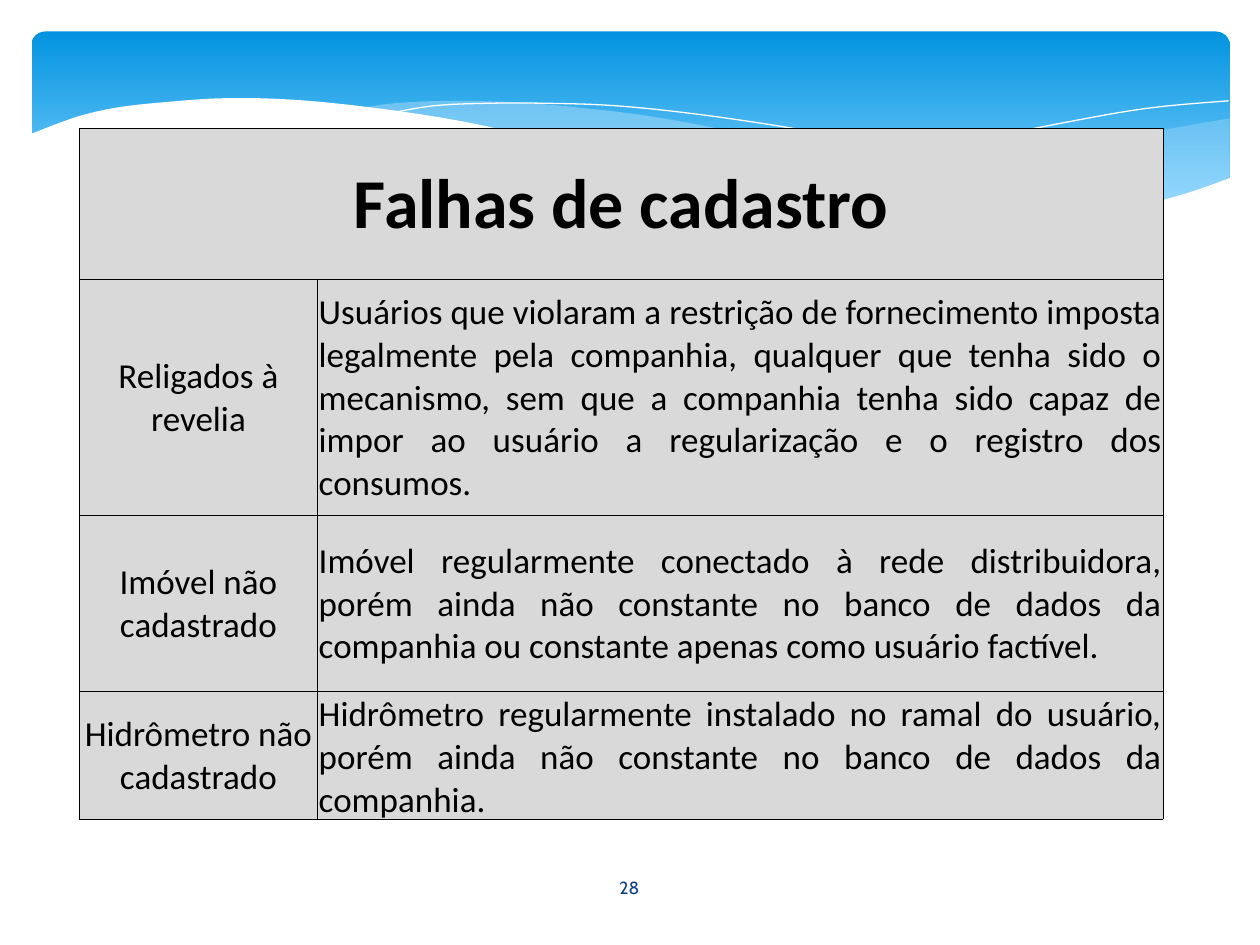
from lxml import etree
from pptx import Presentation
from pptx import util as u
from pptx.dml import color
from pptx.enum import shapes, text
from pptx.oxml import ns

COLUMNS, ROWS = 100, 75
WIDTH, HEIGHT = u.Inches(10), u.Inches(7.5)
BLACK, WHITE, GREY, NAVY, PALE = "000000", "FFFFFF", "D9D9D9", "073E87", "C6E7FC"

RIGHT_WAVE = (
    [(97.6, 9.4), (93.5, 10.1), (89.1, 11), (83.2, 12.5), (77.9, 13.7), (72.9, 14.7), (66.1, 16)],
    [(66.1, 16), (71.9, 16.7), (76.9, 17.1), (81.4, 17.2), (86.3, 17), (90.5, 16.3), (94.2, 15.4), (97.6, 14.1)],
)
MIDDLE_WAVE = (
    [(89.3, 16.7), (83.7, 15.9), (77.5, 14.9), (70.6, 13.4), (62.9, 11.6), (56.9, 10.2),
     (51.4, 9.2), (46.5, 8.6), (42, 8.2), (36.1, 8), (31.3, 8.2), (28.6, 8.6)],
    [(28.6, 8.6), (34.2, 9.4), (40.4, 10.6), (49.1, 12.6), (56.6, 14.3), (63.4, 15.6),
     (69.5, 16.5), (74.8, 17), (80.7, 17.3), (85.7, 17.1), (89.3, 16.7)],
)
LONG_LINE = (
    [(30.9, 9), (34.4, 8.4), (38.7, 8.2), (43.3, 8.2), (48.9, 8.4), (55.6, 9.1),
     (63.6, 10.3), (72.7, 12), (83.1, 14.5), (90.7, 16.6)],
)
SHORT_LINE = (
    [(61.3, 15.1), (67.2, 13.5), (74.8, 11.7), (83.6, 9.9), (91, 8.6), (97.5, 8)],
)
WHITE_WAVE = (
    [(97.7, 14.1), (94, 15.4), (89.9, 16.4), (85, 17), (79.3, 17.1), (72.6, 16.7),
     (64.8, 15.6), (55.5, 13.9), (44.7, 11.4), (36.5, 9.6), (29.2, 8.5), (23, 7.9),
     (17.7, 7.8), (13.2, 8.1), (9.5, 8.5), (6.7, 9.1), (4.6, 9.8), (2.3, 10.7)],
    [(2.3, 22.4), (97.7, 22.4)],
)

TITLE = "Falhas de cadastro"
FAILURES = [
    ("Religados à revelia",
     "Usuários que violaram a restrição de fornecimento imposta legalmente pela companhia, "
     "qualquer que tenha sido o mecanismo, sem que a companhia tenha sido capaz de impor "
     "ao usuário a regularização e o registro dos consumos."),
    ("Imóvel não cadastrado",
     "Imóvel regularmente conectado à rede distribuidora, porém ainda não constante no "
     "banco de dados da companhia ou constante apenas como usuário factível."),
    ("Hidrômetro não cadastrado",
     "Hidrômetro regularmente instalado no ramal do usuário, porém ainda não constante "
     "no banco de dados da companhia."),
]


def rgb(code):
    return color.RGBColor.from_string(code)


def across(columns):
    return round(WIDTH * columns / COLUMNS)


def down(rows):
    return round(HEIGHT * rows / ROWS)


def area(left, top, width, height):
    return across(left), down(top), across(width), down(height)


def smooth(knots, steps=5):
    if len(knots) < 3:
        return knots
    padded = [knots[0], *knots, knots[-1]]
    points = [knots[0]]
    for before, start, end, after in zip(padded, padded[1:], padded[2:], padded[3:]):
        for step in range(1, steps + 1):
            t = step / steps
            points.append(tuple(
                (2 * b + (c - a) * t + (2 * a - 5 * b + 4 * c - d) * t ** 2
                 + (3 * b - a - 3 * c + d) * t ** 3) / 2
                for a, b, c, d in zip(before, start, end, after)))
    return points


def add_outline(page, curves, close):
    points = [(across(x), down(y)) for knots in curves for x, y in smooth(knots)]
    builder = page.shapes.build_freeform(*points[0])
    builder.add_line_segments(points[1:], close=close)
    outline = builder.convert_to_shape()
    outline.shadow.inherit = False
    return outline


def add_wave(page, curves, code, opacity=100):
    wave = add_outline(page, curves, True)
    wave.line.fill.background()
    wave.fill.solid()
    wave.fill.fore_color.rgb = rgb(code)
    if opacity < 100:
        tint = wave.fill._xPr.find(".//" + ns.qn("a:srgbClr"))
        etree.SubElement(tint, ns.qn("a:alpha"), val=str(opacity * 1000))


def add_curve(page, curves):
    curve = add_outline(page, curves, False)
    curve.fill.background()
    curve.line.color.rgb = rgb(WHITE)
    curve.line.width = u.Pt(0)


def add_banner(page):
    banner = page.shapes.add_shape(
        shapes.MSO_SHAPE.ROUNDED_RECTANGLE, *area(2.5, 2.5, 95.1, 15.6))
    banner.adjustments[0] = 0.07
    banner.shadow.inherit = False
    banner.line.fill.background()
    banner.fill.gradient()
    banner.fill.gradient_angle = 270
    for stop, position, code in zip(banner.fill.gradient_stops, (0, 0.9), ("0293E0", "83D3FE")):
        stop.position = position
        stop.color.rgb = rgb(code)


def write(para, words, face, size, code, align, bold=False):
    para.alignment = align
    span = para.add_run()
    span.text = words
    span.font.name = face
    span.font.size = u.Pt(size)
    span.font.bold = bold
    span.font.color.rgb = rgb(code)


def add_borders(cell):
    properties = cell._tc.get_or_add_tcPr()
    for side in ("a:lnL", "a:lnR", "a:lnT", "a:lnB"):
        line = etree.SubElement(properties, ns.qn(side), w=str(u.Pt(0.5)))
        fill = etree.SubElement(line, ns.qn("a:solidFill"))
        etree.SubElement(fill, ns.qn("a:srgbClr"), val=BLACK)


def add_failures(page):
    widths, heights = (18.9, 67.1), (12, 18.7, 14, 9.4)
    frame = page.shapes.add_table(
        len(heights), len(widths), *area(6.3, 10.2, sum(widths), sum(heights)))
    table = frame.table
    table.first_row = table.horz_banding = False
    for column, width in zip(table.columns, widths):
        column.width = across(width)
    for row, height in zip(table.rows, heights):
        row.height = down(height)
    for cell in table.iter_cells():
        add_borders(cell)
        cell.fill.solid()
        cell.fill.fore_color.rgb = rgb(GREY)
        cell.vertical_anchor = text.MSO_ANCHOR.MIDDLE
        cell.margin_left = cell.margin_right = cell.margin_top = across(0.1)
        cell.margin_bottom = 0
    heading = table.cell(0, 0)
    heading.merge(table.cell(0, 1))
    write(heading.text_frame.paragraphs[0], TITLE, "Calibri", 40, BLACK,
          text.PP_ALIGN.CENTER, True)
    for row, failure in enumerate(FAILURES, 1):
        for column, align in enumerate((text.PP_ALIGN.CENTER, text.PP_ALIGN.JUSTIFY)):
            para = table.cell(row, column).text_frame.paragraphs[0]
            write(para, failure[column], "Calibri", 20, BLACK, align)


def add_page_number(page, number):
    box = page.shapes.add_textbox(*area(43.6, 68.4, 12.7, 4))
    box.text_frame.word_wrap = True
    box.text_frame.vertical_anchor = text.MSO_ANCHOR.MIDDLE
    write(box.text_frame.paragraphs[0], number, "Cabin", 10, NAVY, text.PP_ALIGN.CENTER)


def main():
    deck = Presentation()
    deck.slide_width, deck.slide_height = WIDTH, HEIGHT
    page = deck.slides.add_slide(deck.slide_layouts[6])
    add_banner(page)
    add_wave(page, RIGHT_WAVE, PALE, 29)
    add_wave(page, MIDDLE_WAVE, PALE, 40)
    add_curve(page, LONG_LINE)
    add_curve(page, SHORT_LINE)
    add_wave(page, WHITE_WAVE, WHITE)
    add_page_number(page, "28")
    add_failures(page)
    deck.save("out.pptx")


if __name__ == "__main__":
    main()
